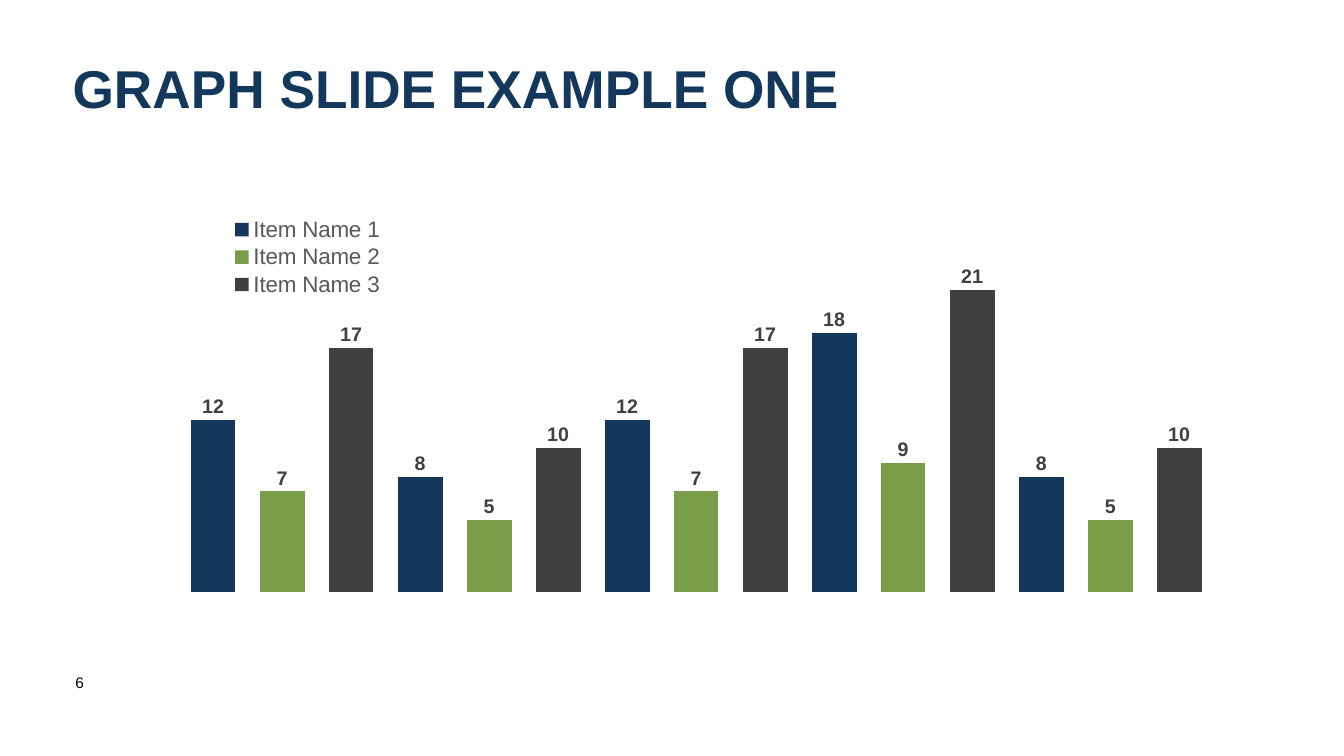
from dataclasses import dataclass

from lxml.etree import SubElement
from pptx import Presentation
from pptx.chart.chart import Chart
from pptx.chart.data import CategoryChartData
from pptx.dml.color import RGBColor
from pptx.enum.chart import XL_CHART_TYPE, XL_LABEL_POSITION, XL_LEGEND_POSITION
from pptx.enum.text import MSO_ANCHOR, PP_ALIGN
from pptx.oxml.ns import qn
from pptx.util import Inches, Pt


@dataclass(frozen=True)
class Theme:
    font: str = "Arial"
    navy: str = "13385C"
    green: str = "799D49"
    charcoal: str = "404041"
    label: str = "404040"
    legend: str = "595959"
    black: str = "000000"
    title_size: int = 38
    legend_size: int = 16
    label_size: int = 14
    number_size: int = 11
    chart_size: int = 10


@dataclass(frozen=True)
class Item:
    name: str
    color: str
    offset: int  # place of the item's bar within each group of three
    values: tuple[int, ...]


THEME = Theme()
GROUP_SIZE = 3
GROUP_COUNT = 5
LABEL_LIFT = -0.066  # share of the chart height, lifts labels above bars
ITEMS = (
    Item("Item Name 3", THEME.charcoal, 2, (17, 10, 17, 21, 10)),
    Item("Item Name 2", THEME.green, 1, (7, 5, 7, 9, 5)),
    Item("Item Name 1", THEME.navy, 0, (12, 8, 12, 18, 8)),
)


def style_font(font, size: int, color: str, bold: bool = False) -> None:
    font.name = THEME.font
    font.size = Pt(size)
    font.bold = bold
    font.color.rgb = RGBColor.from_string(color)


def write_text(shape, text: str, *, size: int, color: str, bold: bool = False,
               anchor: MSO_ANCHOR = MSO_ANCHOR.TOP) -> None:
    frame = shape.text_frame
    frame.word_wrap = True
    frame.vertical_anchor = anchor
    para = frame.paragraphs[0]
    para.alignment = PP_ALIGN.LEFT
    span = para.add_run()
    span.text = text
    style_font(span.font, size, color, bold)


def add_manual_layout(layout, **settings: str | float) -> None:
    manual = SubElement(layout, qn("c:manualLayout"))
    for tag, value in settings.items():
        SubElement(manual, qn(f"c:{tag}")).set("val", str(value))


def insert_layout(parent, index: int, **settings: str | float) -> None:
    for old in parent.findall(qn("c:layout")):
        parent.remove(old)
    layout = SubElement(parent, qn("c:layout"))
    parent.insert(index, layout)
    add_manual_layout(layout, **settings)


def style_item(series, item: Item) -> None:
    series.format.fill.solid()
    series.format.fill.fore_color.rgb = RGBColor.from_string(item.color)
    labels = series.data_labels
    labels.show_value = True
    labels.position = XL_LABEL_POSITION.INSIDE_END
    style_font(labels.font, THEME.label_size, THEME.label, bold=True)
    for group in range(GROUP_COUNT):
        label = series.points[group * GROUP_SIZE + item.offset].data_label
        style_font(label.font, THEME.label_size, THEME.label, bold=True)
        label.position = XL_LABEL_POSITION.INSIDE_END


def style_legend(chart: Chart) -> None:
    chart.has_legend = True
    legend = chart.legend
    legend.position = XL_LEGEND_POSITION.RIGHT
    legend.include_in_layout = False
    style_font(legend.font, THEME.legend_size, THEME.legend)
    insert_layout(chart.element.find(f".//{qn('c:legend')}"), 1,
                  xMode="edge", yMode="edge", x=0.13, y=0.07, w=0.14, h=0.2)


def add_item_chart(slide) -> None:
    data = CategoryChartData()
    bar_count = GROUP_SIZE * GROUP_COUNT
    data.categories = [str(number) for number in range(1, bar_count + 1)]
    for item in ITEMS:
        data.add_series(item.name, [
            item.values[bar // GROUP_SIZE] if bar % GROUP_SIZE == item.offset else None
            for bar in range(bar_count)
        ])
    chart = slide.shapes.add_chart(
        XL_CHART_TYPE.COLUMN_STACKED, Inches(0.64), Inches(1.83),
        Inches(12.05), Inches(4.24), data).chart
    chart.has_title = False
    style_font(chart.font, THEME.chart_size, THEME.black)

    # Hidden axes
    for axis in (chart.category_axis, chart.value_axis):
        axis.has_major_gridlines = False
        axis.visible = False
    chart.value_axis.minimum_scale = 0
    chart.value_axis.maximum_scale = 25

    # Bars, value labels and legend
    plot = chart.plots[0]
    plot.gap_width = 55
    plot.overlap = 100
    plot.vary_by_categories = False
    for series, item in zip(plot.series, ITEMS):
        style_item(series, item)
    for label in chart.element.iter(qn("c:dLbl")):
        insert_layout(label, 1, x=0, y=LABEL_LIFT)
    style_legend(chart)
    insert_layout(chart.element.find(f".//{qn('c:plotArea')}"), 0,
                  layoutTarget="inner", xMode="edge", yMode="edge",
                  x=0.094, y=0.113, w=0.852, h=0.841)


def main() -> None:
    deck = Presentation()
    deck.slide_width = Inches(13.33)
    deck.slide_height = Inches(7.5)
    page = deck.slides.add_slide(deck.slide_layouts[5])

    # Title
    title = page.shapes.title
    title.left, title.top = Inches(0.62), Inches(0.46)
    title.width, title.height = Inches(11.76), Inches(0.81)
    write_text(title, "GRAPH SLIDE EXAMPLE ONE", size=THEME.title_size,
               color=THEME.navy, bold=True, anchor=MSO_ANCHOR.MIDDLE)

    # Chart
    add_item_chart(page)

    # Page number
    box = page.shapes.add_textbox(Inches(0.65), Inches(6.63), Inches(0.58), Inches(0.54))
    write_text(box, "6", size=THEME.number_size, color=THEME.black)

    deck.save("out.pptx")


if __name__ == "__main__":
    main()
